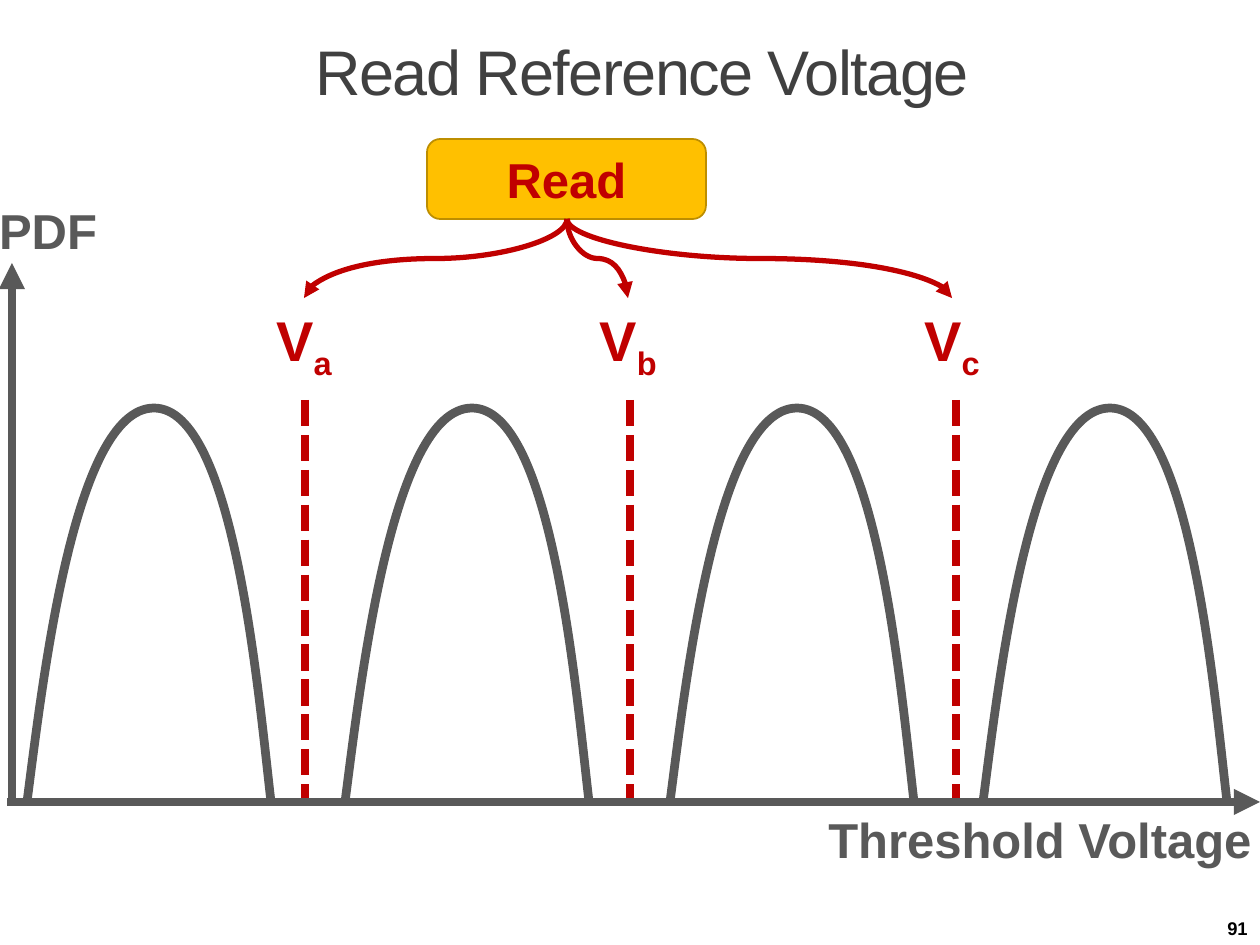
from pptx import Presentation
from pptx.dml.color import RGBColor
from pptx.enum.dml import MSO_LINE
from pptx.enum.shapes import MSO_CONNECTOR, MSO_SHAPE
from pptx.enum.text import MSO_ANCHOR, PP_ALIGN
from pptx.oxml.ns import qn
from pptx.util import Emu, Pt
from lxml.etree import SubElement

SCALE = 914400 / 126
COLORS = {"title": "404040", "axis": "595959", "read": "C00000",
          "box": "FFC000", "edge": "BD8E00", "number": "000000"}


def px(value):
    return Emu(round(value * SCALE))


def color(name):
    return RGBColor.from_string(COLORS[name])


class Sketch:
    """Draws styled elements on one page, with lengths in px."""

    font = "Arial"

    def __init__(self, page):
        self.page = page
        self.shapes = page.shapes

    def label(self, shape, words, size, ink, bold=True, align=PP_ALIGN.CENTER,
              anchor=MSO_ANCHOR.MIDDLE, subscript=""):
        frame = shape.text_frame
        frame.word_wrap = True
        frame.vertical_anchor = anchor
        para = frame.paragraphs[0]
        para.alignment = align
        para.font.name = self.font
        para.font.size = Pt(size)
        para.font.bold = bold
        para.font.color.rgb = color(ink)
        para.add_run().text = words
        if subscript:
            span = para.add_run()
            span.text = subscript
            span.font._element.set("baseline", "-25000")
        return para

    def text(self, left, top, width, height, words, size, ink, **style):
        box = self.shapes.add_textbox(px(left), px(top), px(width), px(height))
        return self.label(box, words, size, ink, **style)

    def title(self, words):
        para = self.text(0, 0, 1260, 150, words, 36, "title", bold=False)
        para.line_spacing = 0.9
        para._p.get_or_add_pPr().set("marL", str(px(24)))
        para.runs[0].font._element.set("spc", "-90")

    def button(self, left, top, width, height, words):
        box = self.shapes.add_shape(MSO_SHAPE.ROUNDED_RECTANGLE,
                                    px(left), px(top), px(width), px(height))
        box.shadow.inherit = False
        box.fill.solid()
        box.fill.fore_color.rgb = color("box")
        box.line.color.rgb = color("edge")
        box.line.width = Pt(1)
        self.label(box, words, 28, "read")

    def line(self, start, end, ink, width=5, kind=MSO_CONNECTOR.STRAIGHT,
             dash=None, arrow=False):
        line = self.shapes.add_connector(kind, *map(px, start + end))
        line.line.color.rgb = color(ink)
        line.line.width = Pt(width)
        if dash:
            line.line.dash_style = dash
        if arrow:
            SubElement(line.get_or_add_ln(), qn("a:tailEnd"), type="triangle")
        SubElement(line.element.spPr, qn("a:effectLst"))
        return line

    def curve_down(self, start, end):
        middle_x, middle_y = [(a + b) / 2 for a, b in zip(start, end)]
        across, down = abs(end[0] - start[0]) / 2, (end[1] - start[1]) / 2
        rightward = end[0] > start[0]
        reach = -down if rightward else down
        line = self.line((middle_x - reach, middle_y - across),
                         (middle_x + reach, middle_y + across),
                         "read", 3, MSO_CONNECTOR.CURVE, arrow=True)
        turn = 270 if rightward else 90
        line.element.spPr.find(qn("a:xfrm")).set("rot", str(turn * 60000))

    def bell(self, left, top, base):
        points = [(15, base - 114), (46, top), (127, top),
                  (207, top), (231, base - 112), (244, base)]
        builder = self.shapes.build_freeform(left, base, scale=SCALE)
        builder.add_line_segments([(left + x, y) for x, y in points], close=False)
        bell = builder.convert_to_shape()
        bell.shadow.inherit = False
        bell.fill.background()
        bell.line.color.rgb = color("axis")
        bell.line.width = Pt(5)
        segments = list(bell.element.iter(qn("a:lnTo")))
        outline = segments[0].getparent()
        for first in (0, 3):
            curve = SubElement(outline, qn("a:cubicBezTo"))
            for segment in segments[first:first + 3]:
                curve.append(segment[0])
                outline.remove(segment)


def main():
    deck = Presentation()
    deck.slide_width, deck.slide_height = px(1260), px(945)
    sketch = Sketch(deck.slides.add_slide(deck.slide_layouts[6]))
    base = 802

    sketch.title("Read Reference Voltage")
    sketch.text(1129, 898, 131, 47, "91", 10.5, "number",
                align=PP_ALIGN.RIGHT, anchor=MSO_ANCHOR.BOTTOM)
    sketch.text(808, 803, 464, 72, "Threshold Voltage", 28, "axis",
                anchor=MSO_ANCHOR.TOP)
    sketch.text(-18, 194, 132, 72, "PDF", 28, "axis", anchor=MSO_ANCHOR.TOP)

    for x in (305, 630, 956):
        sketch.line((x, 400), (x, base), "read", dash=MSO_LINE.SQUARE_DOT)
    sketch.line((12, base), (12, 263), "axis", arrow=True)
    for left in (27, 345, 670, 983):
        sketch.bell(left, 408, base)
    sketch.line((7, base), (1260, base), "axis", arrow=True)

    sketch.button(427, 139, 279, 80, "Read")
    for index, letter in enumerate("abc"):
        center = 304 + 324 * index
        sketch.text(center - 61, 299, 122, 81, "V", 32, "read",
                    anchor=MSO_ANCHOR.TOP, subscript=letter)
        sketch.curve_down((567, 219), (center, 298))

    deck.save("out.pptx")


if __name__ == "__main__":
    main()
